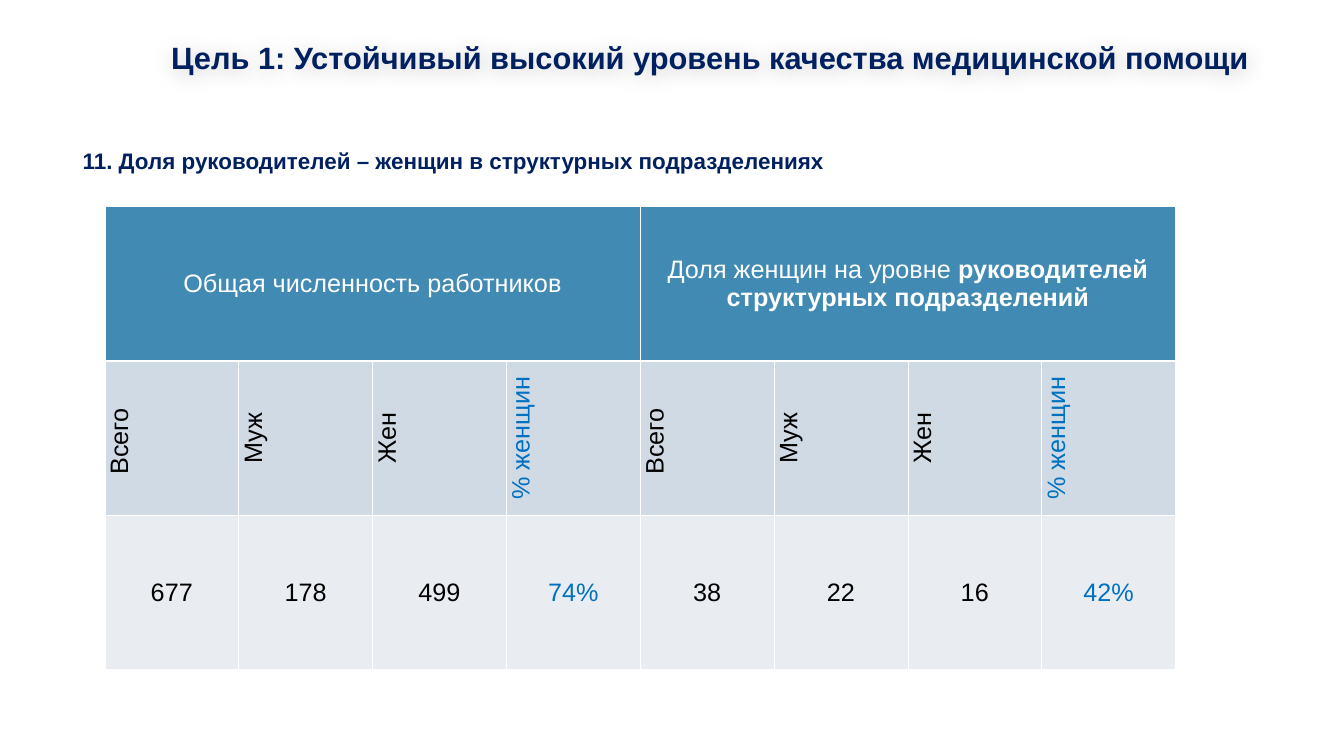
import pptx
import pptx.dml.color
import pptx.enum.shapes
import pptx.enum.text
import pptx.util
from lxml import etree
from pptx.oxml.ns import qn

Inches = pptx.util.Inches
ALIGN = pptx.enum.text.PP_ALIGN
MIDDLE = pptx.enum.text.MSO_ANCHOR.MIDDLE
COLORS = {
    "navy": "002060", "white": "FFFFFF", "black": "000000", "accent": "0070C0",
    "header": "418AB3", "label_row": "CFDAE5", "value_row": "E9EDF2",
}


def style_run(span, size, color, bold=False):
    span.font.name = "Arial"
    span.font.size = pptx.util.Pt(size)
    span.font.bold = bold
    span.font.color.rgb = pptx.dml.color.RGBColor.from_string(COLORS[color])


def style_cell(cell, fill, color, bottom=1):
    cell.margin_left = cell.margin_right = cell.margin_top = Inches(0.01)
    cell.margin_bottom = 0
    cell.vertical_anchor = MIDDLE
    properties = cell._tc.get_or_add_tcPr()
    for side, width in (("L", 1), ("R", 1), ("T", 1), ("B", bottom)):
        line = etree.SubElement(properties, qn(f"a:ln{side}"), w=str(pptx.util.Pt(width)))
        solid = etree.SubElement(line, qn("a:solidFill"))
        etree.SubElement(solid, qn("a:srgbClr"), val=COLORS["white"])
    cell.fill.solid()
    cell.fill.fore_color.rgb = pptx.dml.color.RGBColor.from_string(COLORS[fill])
    para = cell.text_frame.paragraphs[0]
    para.alignment = ALIGN.CENTER
    for span in para.runs:
        style_run(span, 36, color)


deck = pptx.Presentation()
deck.slide_width = Inches(26.66)
deck.slide_height = Inches(15)
page = deck.slides.add_slide(deck.slide_layouts[6])

# Title with a soft shadow
title = page.shapes.add_shape(
    pptx.enum.shapes.MSO_SHAPE.ROUNDED_RECTANGLE,
    Inches(3.29), Inches(0.78), Inches(21.7), Inches(0.7))
title.adjustments[0] = 0.028
title.fill.background()
title.line.fill.background()
title.shadow.inherit = False
effects = title._element.spPr.find(qn("a:effectLst"))
shadow = etree.SubElement(effects, qn("a:outerShdw"), blurRad=str(Inches(0.4)),
                          dist=str(Inches(0.04)), dir="5400000", algn="t", rotWithShape="0")
shade = etree.SubElement(shadow, qn("a:srgbClr"), val=COLORS["black"])
etree.SubElement(shade, qn("a:alpha"), val="20000")
frame = title.text_frame
frame.text = "Цель 1: Устойчивый высокий уровень качества медицинской помощи"
frame.word_wrap = True
frame.margin_right = 0
frame.vertical_anchor = MIDDLE
frame.paragraphs[0].alignment = ALIGN.LEFT
style_run(frame.paragraphs[0].runs[0], 44, "navy", bold=True)

# Indicator heading
heading = page.shapes.add_textbox(Inches(1.54), Inches(2.78), Inches(15.02), Inches(0.72))
frame = heading.text_frame
frame.text = "11. Доля руководителей – женщин в структурных подразделениях"
frame.word_wrap = False
frame.auto_size = pptx.enum.text.MSO_AUTO_SIZE.SHAPE_TO_FIT_TEXT
frame.paragraphs[0].line_spacing = 1.15
style_run(frame.paragraphs[0].runs[0], 32, "navy", bold=True)

# Staff table: two groups of four columns
labels = ["Всего ", "Муж", "Жен", "% женщин"] * 2
values = ["677", "178", "499", "74%", "38", "22", "16", "42%"]
table = page.shapes.add_table(3, len(labels), Inches(2.08), Inches(4.1),
                              Inches(21.24), Inches(9.18)).table
for column in table.columns:
    column.width = Inches(2.655)
for row in table.rows:
    row.height = Inches(3.06)

# Group headers
groups = [("Общая численность работников", ""),
          ("Доля женщин на уровне ", "руководителей структурных подразделений")]
for index, (plain, strong) in enumerate(groups):
    first = index * 4
    table.cell(0, first).merge(table.cell(0, first + 3))
    cell = table.cell(0, first)
    cell.text_frame.text = plain
    if strong:
        cell.text_frame.paragraphs[0].add_run().text = strong
    for position in range(first, first + 4):
        style_cell(table.cell(0, position), "header", "white", bottom=3)
    for span in cell.text_frame.paragraphs[0].runs[1:]:
        span.font.bold = True

# Rotated labels and values, percentages in the accent colour
for index, (label, value) in enumerate(zip(labels, values)):
    color = "accent" if "%" in label else "black"
    for row, text, fill in ((1, label, "label_row"), (2, value, "value_row")):
        cell = table.cell(row, index)
        cell.text_frame.text = text
        style_cell(cell, fill, color)
    table.cell(1, index)._tc.get_or_add_tcPr().set("vert", "vert270")
    for position in ("T",):
        top = table.cell(1, index)._tc.tcPr.find(qn(f"a:ln{position}"))
        top.set("w", str(pptx.util.Pt(3)))

deck.save("out.pptx")
